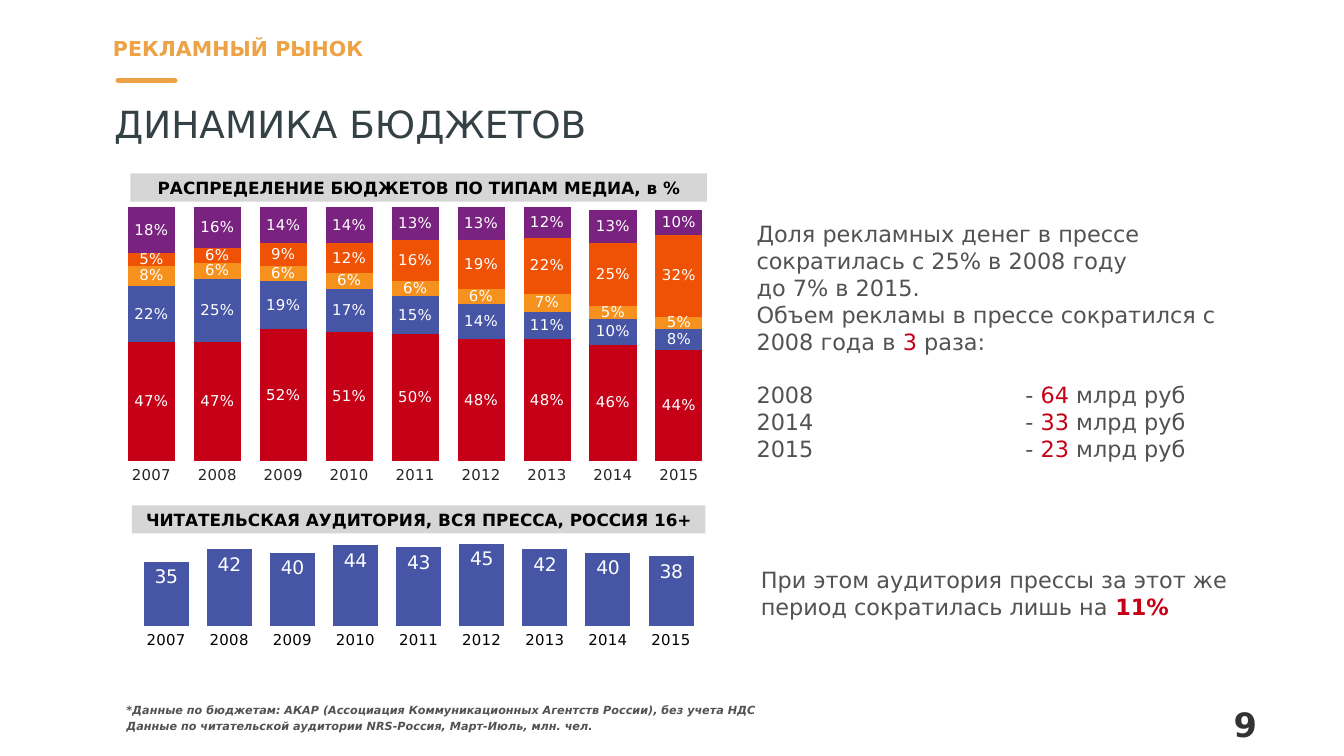
import pptx
import pptx.chart.data
import pptx.dml.color
import pptx.enum.chart
import pptx.enum.shapes
import pptx.enum.text
import pptx.util
from dataclasses import dataclass
from lxml import etree
from pptx.oxml.ns import qn

Pt = pptx.util.Pt
Chart = pptx.enum.chart
Align = pptx.enum.text.PP_ALIGN
Anchor = pptx.enum.text.MSO_ANCHOR


@dataclass(frozen=True)
class Theme:
    font: str = "DejaVu Sans"
    gold: str = "ECA245"
    slate: str = "354245"
    body: str = "525252"
    dark: str = "333333"
    axis: str = "262626"
    black: str = "000000"
    white: str = "FFFFFF"
    band: str = "D6D6D6"
    red: str = "C50017"
    blue: str = "4655A5"
    amber: str = "F7911E"
    orange: str = "EF5205"
    purple: str = "7A2280"
    title: float = 20
    page: float = 18
    text: float = 12
    topic: float = 11
    value: float = 10
    head: float = 9
    label: float = 8
    note: float = 6


def color(code):
    return pptx.dml.color.RGBColor.from_string(code)


class Deck:
    def __init__(self, theme):
        self.theme = theme
        self.file = pptx.Presentation()
        self.file.slide_width = Pt(720)
        self.file.slide_height = Pt(405)
        self.slide = self.file.slides.add_slide(self.file.slide_layouts[5])
        self.shapes = self.slide.shapes

    def style(self, font, size, code, bold=False, italic=False):
        font.name = self.theme.font
        font.size = Pt(size)
        font.color.rgb = color(code)
        font.bold = bold
        font.italic = italic

    def fill(self, shape, lines, size, code, bold=False, italic=False,
             align=Align.LEFT, anchor=Anchor.TOP, inset=(4.32, 2.16),
             wrap=True, gaps=None, tab=None):
        """Write lines; each is a list of parts, a (text, bold) part is red."""
        frame = shape.text_frame
        frame.word_wrap = wrap
        frame.auto_size = pptx.enum.text.MSO_AUTO_SIZE.NONE
        frame.vertical_anchor = anchor
        frame.margin_left = frame.margin_right = Pt(inset[0])
        frame.margin_top = frame.margin_bottom = Pt(inset[1])
        for i, line in enumerate(lines):
            para = frame.add_paragraph() if i else frame.paragraphs[0]
            para.alignment = align
            para.space_before = Pt((gaps or {}).get(i, 0))
            if tab:
                stops = etree.SubElement(para._p.get_or_add_pPr(), qn("a:tabLst"))
                etree.SubElement(stops, qn("a:tab"), pos=str(Pt(tab)), algn="l")
            self.style(para.font, size, code, bold, italic)
            for part in line:
                if isinstance(part, tuple):
                    run = para.add_run()
                    run.text, run.font.bold = part
                    run.font.color.rgb = color(self.theme.red)
                else:
                    for j, piece in enumerate(part.split("\v")):
                        if j:
                            para.add_line_break()
                        para.add_run().text = piece

    def title(self, box, text):
        shape = self.shapes.title
        shape.left, shape.top, shape.width, shape.height = map(Pt, box)
        self.fill(shape, [[text]], self.theme.title, self.theme.slate)

    def text(self, box, lines, size, code, **opts):
        self.fill(self.shapes.add_textbox(*map(Pt, box)), lines, size, code, **opts)

    def band(self, box, text):
        rect = pptx.enum.shapes.MSO_SHAPE.RECTANGLE
        shape = self.shapes.add_shape(rect, *map(Pt, box))
        shape.shadow.inherit = False
        shape.fill.solid()
        shape.fill.fore_color.rgb = color(self.theme.band)
        shape.line.fill.background()
        self.fill(shape, [[text]], self.theme.head, self.theme.black, bold=True,
                  align=Align.CENTER, anchor=Anchor.MIDDLE, inset=(2.16, 2.16))

    def rule(self, left, right, top):
        kind = pptx.enum.shapes.MSO_CONNECTOR.STRAIGHT
        line = self.shapes.add_connector(kind, *map(Pt, (left, top, right, top)))
        line.line.color.rgb = color(self.theme.gold)
        line.line.width = Pt(3)
        line.line._ln.set("cap", "rnd")
        etree.SubElement(line._element.spPr, qn("a:effectLst"))

    def chart(self, box, kind, years, rows, form, size, ink, top, plot, spot):
        """Draw columns; rows are (values, colour), plot is x, y, w, h in parts."""
        data = pptx.chart.data.CategoryChartData(number_format=form)
        data.categories = years
        for i, (vals, _) in enumerate(rows, 1):
            data.add_series(f"Series {i}", vals)
        chart = self.shapes.add_chart(kind, *map(Pt, box), data).chart
        chart.has_legend = chart.has_title = False
        self.style(chart.font, size, self.theme.dark)
        bars = chart.plots[0]
        bars.gap_width = 40
        bars.vary_by_categories = False
        if len(rows) > 1:
            bars.overlap = 100
        for row, (_, code) in zip(bars.series, rows):
            row.format.fill.solid()
            row.format.fill.fore_color.rgb = color(code)
            tags = row.data_labels
            tags.show_value = True
            tags.number_format = form
            tags.number_format_is_linked = False
            tags.position = spot
            self.style(tags.font, size, self.theme.white)
        cats, scale = chart.category_axis, chart.value_axis
        cats.major_tick_mark = Chart.XL_TICK_MARK.NONE
        cats.format.line.fill.background()
        self.style(cats.tick_labels.font, self.theme.label, ink)
        scale.visible = scale.has_major_gridlines = False
        scale.minimum_scale, scale.maximum_scale = 0, top
        area = chart._chartSpace.chart.plotArea
        for old in area.findall(qn("c:layout")):
            area.remove(old)
        layout = etree.Element(qn("c:layout"))
        area.insert(0, layout)
        manual = etree.SubElement(layout, qn("c:manualLayout"))
        marks = [("layoutTarget", "inner"), ("xMode", "edge"), ("yMode", "edge")]
        for name, val in marks + list(zip("xywh", plot)):
            etree.SubElement(manual, qn("c:" + name), val=str(val))


def main():
    look = Theme()
    deck = Deck(look)
    years = [str(year) for year in range(2007, 2016)]
    media = [
        ([.47, .47, .52, .51, .5, .48, .48, .46, .44], look.red),
        ([.22, .25, .19, .17, .15, .14, .11, .1, .08], look.blue),
        ([.08, .06, .06, .06, .06, .06, .07, .05, .05], look.amber),
        ([.05, .06, .09, .12, .16, .19, .22, .25, .32], look.orange),
        ([.18, .16, .14, .14, .13, .13, .12, .13, .1], look.purple),
    ]
    readers = [([35, 42, 40, 44, 43, 45, 42, 40, 38], look.blue)]
    sums = [(2008, 64), (2014, 33), (2015, 23)]

    deck.rule(63.4, 93.6, 43.2)
    deck.text((56.2, 17.3, 142.6, 17.3), [["РЕКЛАМНЫЙ РЫНОК"]],
              look.topic, look.gold, bold=True, wrap=False)
    deck.title((56.9, 52, 520.6, 31.7), "ДИНАМИКА БЮДЖЕТОВ")
    deck.text((656.6, 375.1, 24, 17.3), [["9"]], look.page, look.dark,
              bold=True, wrap=False)

    deck.band((69.8, 92.9, 308.9, 15.1), "РАСПРЕДЕЛЕНИЕ БЮДЖЕТОВ ПО ТИПАМ МЕДИА, в %")
    deck.chart((56.9, 108, 331.2, 159.1), Chart.XL_CHART_TYPE.COLUMN_STACKED,
               years, media, "0%", look.label, look.axis, 1,
               (.02, .02, .96, .855), Chart.XL_LABEL_POSITION.CENTER)
    deck.chart((70.6, 278.6, 307.4, 73.4), Chart.XL_CHART_TYPE.COLUMN_CLUSTERED,
               years, readers, "#,##0", look.value, look.black, 57.5,
               (.005, .005, .99, .77), Chart.XL_LABEL_POSITION.INSIDE_END)
    deck.band((70.6, 270.7, 307.4, 15.1), "ЧИТАТЕЛЬСКАЯ АУДИТОРИЯ, ВСЯ ПРЕССА, РОССИЯ 16+")

    story = [
        ["Доля рекламных денег в прессе сократилась с 25% в 2008 году\vдо 7% в 2015."],
        ["Объем рекламы в прессе сократился с 2008 года в ", ("3", False), " раза:"],
    ]
    story += [[f"{year}\t- ", (f"{sum_} ", False), "млрд руб"] for year, sum_ in sums]
    deck.text((398.2, 114.5, 281.5, 134.6), story, look.text, look.body,
              inset=(7.2, 3.6), gaps={2: 14.4}, tab=144)
    deck.text((405.4, 301, 270, 45.4),
              [["При этом аудитория прессы за этот же период сократилась лишь на ",
                ("11%", True)]], look.text, look.body, inset=(2.16, 2.16))
    deck.text((63.4, 360, 625, 34.6),
              [["*Данные по бюджетам: АКАР (Ассоциация Коммуникационных Агентств России),"
                " без учета НДС"],
               ["Данные по читательской аудитории NRS-Россия, Март-Июль, млн. чел."]],
              look.note, look.body, bold=True, italic=True,
              anchor=Anchor.BOTTOM, gaps={1: 1.2})
    deck.file.save("out.pptx")


if __name__ == "__main__":
    main()
